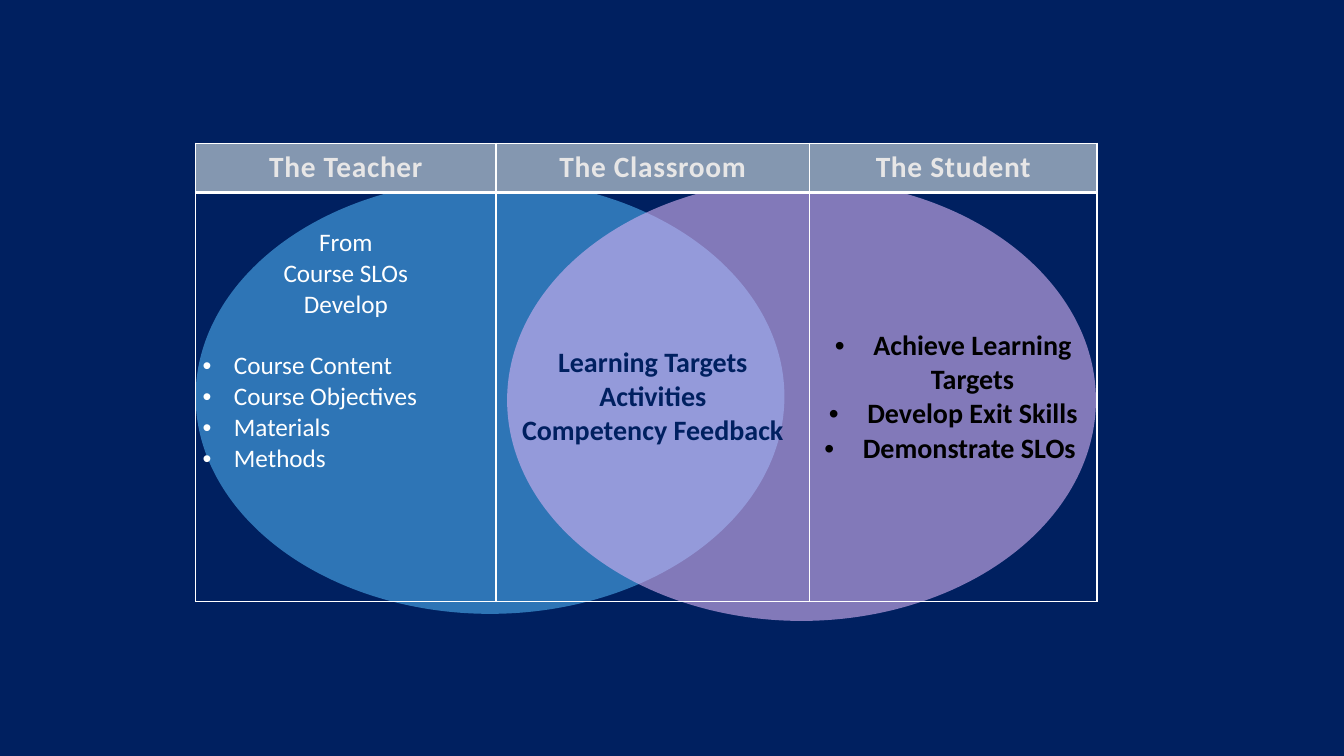
from dataclasses import dataclass

import lxml.etree
import pptx
import pptx.dml.color
import pptx.enum.shapes
import pptx.enum.text
import pptx.oxml.ns
import pptx.slide
import pptx.table
import pptx.text.text
import pptx.util

Inches = pptx.util.Inches
Pt = pptx.util.Pt
Align = pptx.enum.text.PP_ALIGN
Anchor = pptx.enum.text.MSO_ANCHOR


@dataclass(frozen=True)
class Theme:
    font: str = "Calibri"
    navy: str = "002060"
    teacher_blue: str = "2E75B6"
    student_lilac: str = "D5B2F2"
    header_fill: str = "8497B0"
    header_text: str = "E7E6E6"
    white: str = "FFFFFF"
    black: str = "000000"
    header_size: float = 21
    teacher_size: float = 18
    outcome_size: float = 20
    thin_rule: float = 1
    header_rule: float = 3


THEME = Theme()


@dataclass(frozen=True)
class Circle:
    left: float
    height: float
    color: str
    opacity: int = 100


@dataclass(frozen=True)
class TextStyle:
    size: float
    color: str
    bold: bool = True
    tracking: float = 0


@dataclass(frozen=True)
class Line:
    text: str
    bullet_indent: float = 0
    align: Align = Align.CENTER
    space_before: float = 0


@dataclass(frozen=True)
class Column:
    heading: str
    width: float
    style: TextStyle
    lines: tuple[Line, ...]
    anchor: Anchor = Anchor.MIDDLE
    top_margin: float = 0.04


HEADING_STYLE = TextStyle(THEME.header_size, THEME.header_text, tracking=0.5)
TABLE_LEFT, TABLE_TOP = 1.94, 1.42
HEADER_HEIGHT, BODY_HEIGHT = 0.49, 4.06
CIRCLE_TOP, CIRCLE_WIDTH = 1.78, 5.84

CIRCLES = (
    Circle(1.94, 4.31, THEME.teacher_blue),
    Circle(5.03, 4.38, THEME.student_lilac, opacity=61),
)

COLUMNS = (
    Column(
        "The Teacher", 2.98,
        TextStyle(THEME.teacher_size, THEME.white, bold=False),
        (
            Line("From"),
            Line("Course SLOs"),
            Line("Develop"),
            Line("Course Content", 0.31, Align.LEFT, space_before=22),
            Line("Course Objectives", 0.31, Align.LEFT),
            Line("Materials", 0.31, Align.LEFT),
            Line("Methods", 0.31, Align.LEFT),
        ),
        Anchor.TOP, top_margin=0.35,
    ),
    Column(
        "The Classroom", 3.11,
        TextStyle(THEME.outcome_size, THEME.navy),
        (Line("Learning Targets"), Line("Activities"), Line("Competency Feedback")),
    ),
    Column(
        "The Student", 2.85,
        TextStyle(THEME.outcome_size, THEME.black),
        (
            Line("Achieve Learning Targets", 0.38),
            Line("Develop Exit Skills", 0.38),
            Line("Demonstrate SLOs ", 0.38),
        ),
    ),
)


def rgb(color: str) -> pptx.dml.color.RGBColor:
    return pptx.dml.color.RGBColor.from_string(color)


def add_child(parent: lxml.etree._Element, tag: str, **attributes: str) -> lxml.etree._Element:
    return lxml.etree.SubElement(parent, pptx.oxml.ns.qn(tag), attributes)


def draw_circle(slide: pptx.slide.Slide, circle: Circle) -> None:
    oval = slide.shapes.add_shape(
        pptx.enum.shapes.MSO_SHAPE.OVAL,
        Inches(circle.left), Inches(CIRCLE_TOP),
        Inches(CIRCLE_WIDTH), Inches(circle.height),
    )
    oval.shadow.inherit = False
    oval.line.fill.background()
    oval.fill.solid()
    oval.fill.fore_color.rgb = rgb(circle.color)
    if circle.opacity < 100:
        color = oval.fill._xPr.find(".//" + pptx.oxml.ns.qn("a:srgbClr"))
        add_child(color, "a:alpha", val=str(circle.opacity * 1000))


def draw_borders(cell: pptx.table._Cell, top: float, bottom: float) -> None:
    """Rule all four sides; must run before the cell's fill is set."""
    properties = cell._tc.get_or_add_tcPr()
    widths = {"L": THEME.thin_rule, "R": THEME.thin_rule, "T": top, "B": bottom}
    for side, width in widths.items():
        rule = add_child(properties, f"a:ln{side}", w=str(Pt(width)))
        add_child(add_child(rule, "a:solidFill"), "a:srgbClr", val=THEME.white)


def write_line(paragraph: pptx.text.text._Paragraph, line: Line, style: TextStyle) -> None:
    paragraph.text = line.text
    paragraph.alignment = line.align
    if line.space_before:
        paragraph.space_before = Pt(line.space_before)
    if line.bullet_indent:
        properties = paragraph._p.get_or_add_pPr()
        indent = Inches(line.bullet_indent)
        properties.set("marL", str(indent))
        properties.set("indent", str(-indent))
        add_child(properties, "a:buFont", typeface="Arial")
        add_child(properties, "a:buChar", char="•")
    for run in paragraph.runs:
        run.font.name = THEME.font
        run.font.size = Pt(style.size)
        run.font.bold = style.bold
        run.font.color.rgb = rgb(style.color)
        run._r.get_or_add_rPr().set("spc", str(int(style.tracking * 100)))


def fill_cell(cell: pptx.table._Cell, lines: tuple[Line, ...], style: TextStyle,
              anchor: Anchor = Anchor.MIDDLE, top_margin: float = 0.04) -> None:
    cell.vertical_anchor = anchor
    cell.margin_left = cell.margin_right = Inches(0.07)
    cell.margin_top, cell.margin_bottom = Inches(top_margin), Inches(0.04)
    frame = cell.text_frame
    frame.text = "\n".join(line.text for line in lines)
    for paragraph, line in zip(frame.paragraphs, lines):
        write_line(paragraph, line, style)


def draw_table(slide: pptx.slide.Slide) -> None:
    table = slide.shapes.add_table(
        2, len(COLUMNS), Inches(TABLE_LEFT), Inches(TABLE_TOP),
        Inches(sum(column.width for column in COLUMNS)),
        Inches(HEADER_HEIGHT + BODY_HEIGHT),
    ).table
    table.horz_banding = False
    table.rows[0].height = Inches(HEADER_HEIGHT)
    table.rows[1].height = Inches(BODY_HEIGHT)
    for index, column in enumerate(COLUMNS):
        table.columns[index].width = Inches(column.width)
        header, body = table.cell(0, index), table.cell(1, index)
        draw_borders(header, THEME.thin_rule, THEME.header_rule)
        header.fill.solid()
        header.fill.fore_color.rgb = rgb(THEME.header_fill)
        fill_cell(header, (Line(column.heading),), HEADING_STYLE)
        draw_borders(body, THEME.header_rule, THEME.thin_rule)
        body.fill.background()
        fill_cell(body, column.lines, column.style, column.anchor, column.top_margin)


def main() -> None:
    presentation = pptx.Presentation()
    presentation.slide_width = Inches(13.33)
    presentation.slide_height = Inches(7.5)
    slide = presentation.slides.add_slide(presentation.slide_layouts[6])
    slide.background.fill.solid()
    slide.background.fill.fore_color.rgb = rgb(THEME.navy)
    for circle in CIRCLES:
        draw_circle(slide, circle)
    draw_table(slide)
    presentation.save("out.pptx")


if __name__ == "__main__":
    main()
